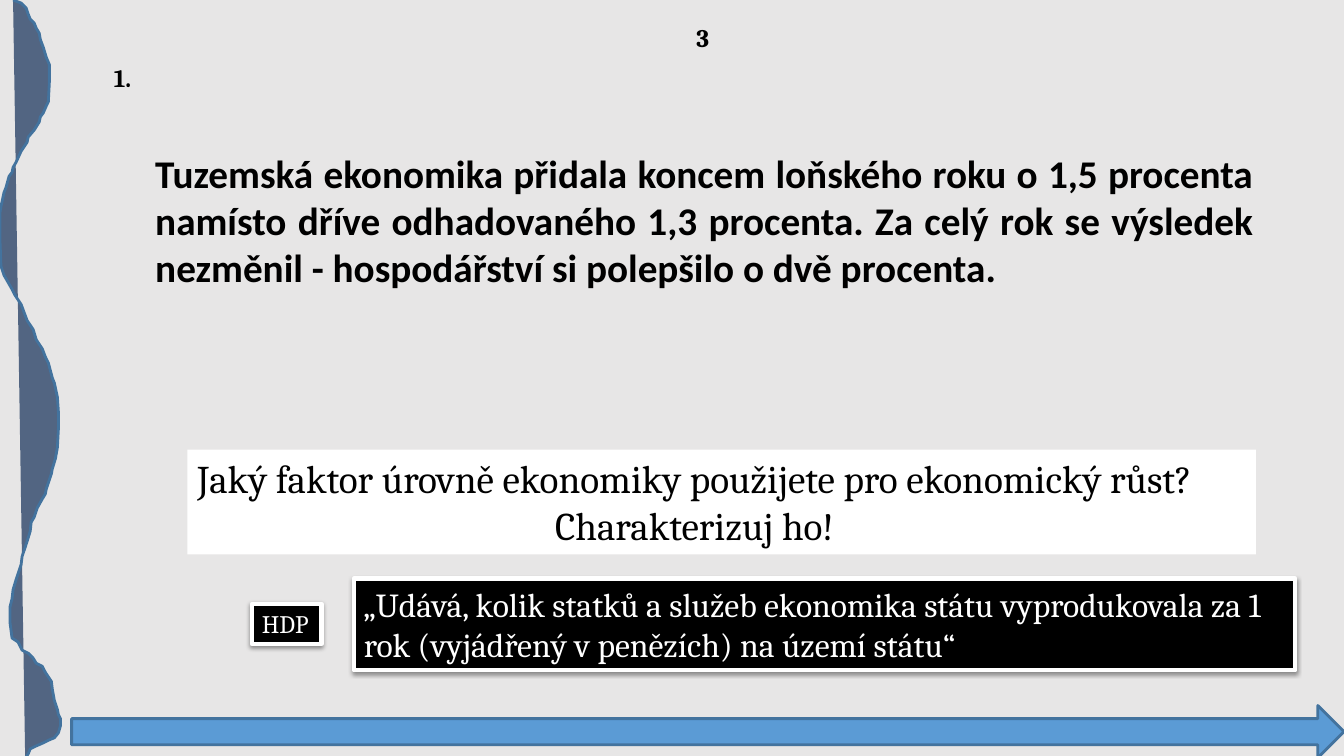
from dataclasses import dataclass

from lxml.etree import SubElement
from pptx import Presentation
from pptx.dml.color import RGBColor
from pptx.enum.shapes import MSO_SHAPE
from pptx.enum.text import MSO_ANCHOR, MSO_AUTO_SIZE, PP_ALIGN
from pptx.oxml.ns import qn
from pptx.shapes.autoshape import Shape
from pptx.slide import Slide
from pptx.util import Emu, Inches, Pt

SLIDE_WIDTH = Inches(13.33)
SLIDE_HEIGHT = Inches(7.5)
COLUMN = SLIDE_WIDTH / 100
ROW = SLIDE_HEIGHT / 100
RIBBON_UNITS_PER_HEIGHT = 750

BLACK, WHITE = "000000", "FFFFFF"
BACKGROUND = "E7E6E6"
RIBBON_FILL, ARROW_FILL, DECOR_LINE = "526582", "5B9BD5", "43739E"

RIBBON_POINTS = [
    (13, 0), (21, 3), (26, 8), (28, 14), (30, 19), (34, 23), (36, 28),
    (39, 33), (40, 39), (43, 47), (46, 57), (49, 64), (49, 82), (48, 101),
    (46, 105), (43, 112), (40, 116), (39, 121), (34, 129), (28, 136),
    (27, 141), (21, 150), (16, 161), (13, 166), (12, 171), (9, 175),
    (6, 186), (4, 191), (1, 205), (0, 211), (0, 238), (1, 264), (4, 273),
    (8, 280), (12, 287), (15, 293), (21, 302), (27, 318), (33, 327),
    (36, 337), (42, 346), (45, 354), (48, 360), (52, 375), (54, 380),
    (57, 394), (58, 409), (58, 425), (57, 444), (55, 455), (52, 465),
    (51, 470), (46, 485), (45, 490), (42, 495), (37, 504), (34, 513),
    (31, 518), (30, 527), (27, 537), (25, 543), (22, 552), (21, 560),
    (18, 569), (16, 575), (13, 585), (12, 594), (10, 602), (10, 618),
    (12, 633), (18, 637), (22, 645), (28, 648), (33, 653), (36, 658),
    (42, 661), (45, 667), (51, 676), (52, 684), (54, 695), (57, 704),
    (58, 709), (60, 713), (60, 720), (58, 727), (54, 732), (49, 734),
    (43, 737), (36, 740), (30, 743), (28, 748), (25, 752),
]


@dataclass(frozen=True)
class Area:
    """Left, top, width and height in grid columns and rows."""

    left: float
    top: float
    width: float
    height: float

    def lengths(self) -> tuple[Emu, Emu, Emu, Emu]:
        """Return the four lengths of the area."""
        return (Emu(round(self.left * COLUMN)), Emu(round(self.top * ROW)),
                Emu(round(self.width * COLUMN)), Emu(round(self.height * ROW)))


@dataclass(frozen=True)
class Label:
    """A box of text with its look."""

    text: str
    area: Area
    size: int
    color: str = BLACK
    bold: bool = False
    fill: str | None = None
    framed: bool = False
    wrap: bool = False
    alignments: tuple[PP_ALIGN, ...] = (PP_ALIGN.LEFT,)
    font: str = "Cambria"


HEADLINE = Label(
    "Tuzemská ekonomika přidala koncem loňského roku o 1,5 procenta namísto "
    "dříve odhadovaného 1,3 procenta. Za celý rok se výsledek nezměnil - "
    "hospodářství si polepšilo o dvě procenta.",
    Area(10.8, 19.07, 83.18, 20.13), 28, bold=True, wrap=True,
    alignments=(PP_ALIGN.JUSTIFY,), font="Calibri")

LABELS = [
    Label("1.", Area(7.73, 7.6, 3.08, 5.33), 18, bold=True),
    Label("3", Area(51.08, 2.27, 2.63, 5.33), 18, bold=True),
    Label("Jaký faktor úrovně ekonomiky použijete pro ekonomický růst?\n"
          "Charakterizuj ho!",
          Area(13.95, 59.47, 79.5, 13.87), 28, fill=WHITE,
          alignments=(PP_ALIGN.LEFT, PP_ALIGN.CENTER)),
    Label("HDP", Area(18.75, 79.87, 5.18, 5.33), 18, WHITE,
          fill=BLACK, framed=True),
    Label("„Udává, kolik statků a služeb ekonomika státu vyprodukovala za 1 "
          "rok (vyjádřený v penězích) na území státu“",
          Area(26.33, 76.53, 70.05, 12.13), 24, WHITE,
          fill=BLACK, framed=True, wrap=True),
]


def color(value: str) -> RGBColor:
    """Turn a hex string into a colour."""
    return RGBColor.from_string(value)


def paint(shape: Shape, fill: str, line: str | None, width: float = 0) -> None:
    """Set fill and outline and remove the shadow."""
    shape.shadow.inherit = False
    shape.fill.solid()
    shape.fill.fore_color.rgb = color(fill)
    if line is None:
        shape.line.fill.background()
    else:
        shape.line.color.rgb = color(line)
        shape.line.width = Pt(width)


def add_soft_shadow(shape: Shape) -> None:
    """Give the shape a soft shadow falling straight down."""
    effects = shape.element.spPr.find(qn("a:effectLst"))
    shadow = SubElement(effects, qn("a:outerShdw"), blurRad=str(Pt(3.1)),
                        dist=str(Pt(1.6)), dir="5400000", rotWithShape="0")
    tint = SubElement(shadow, qn("a:srgbClr"), val=BLACK)
    SubElement(tint, qn("a:alpha"), val="38000")


def write_label(shape: Shape, label: Label) -> None:
    """Write and format the text of a label."""
    frame = shape.text_frame
    frame.text = label.text
    frame.word_wrap = label.wrap
    frame.auto_size = MSO_AUTO_SIZE.SHAPE_TO_FIT_TEXT
    frame.vertical_anchor = MSO_ANCHOR.TOP
    for paragraph, alignment in zip(frame.paragraphs, label.alignments):
        paragraph.alignment = alignment
        for run in paragraph.runs:
            run.font.name = label.font
            run.font.size = Pt(label.size)
            run.font.bold = label.bold
            run.font.color.rgb = color(label.color)


def add_label(slide: Slide, label: Label) -> None:
    """Draw a label as a plain text box or a filled rectangle."""
    lengths = label.area.lengths()
    if label.fill is None:
        shape = slide.shapes.add_textbox(*lengths)
    else:
        shape = slide.shapes.add_shape(MSO_SHAPE.RECTANGLE, *lengths)
        paint(shape, label.fill, WHITE if label.framed else None, 3)
    if label.framed:
        add_soft_shadow(shape)
    write_label(shape, label)


def add_headline(slide: Slide) -> None:
    """Place the news text in the title placeholder."""
    title = slide.shapes.title
    title.left, title.top, title.width, title.height = HEADLINE.area.lengths()
    write_label(title, HEADLINE)


def add_decoration(slide: Slide) -> None:
    """Draw the wavy ribbon on the left and the arrow at the bottom."""
    builder = slide.shapes.build_freeform(
        *RIBBON_POINTS[0], scale=SLIDE_HEIGHT / RIBBON_UNITS_PER_HEIGHT)
    builder.add_line_segments(RIBBON_POINTS[1:], close=False)
    paint(builder.convert_to_shape(), RIBBON_FILL, DECOR_LINE, 2)
    arrow = slide.shapes.add_shape(
        MSO_SHAPE.RIGHT_ARROW, *Area(5.33, 93.33, 94.67, 6.93).lengths())
    paint(arrow, ARROW_FILL, DECOR_LINE, 2)


def main() -> None:
    """Build the slide and save it."""
    presentation = Presentation()
    presentation.slide_width = SLIDE_WIDTH
    presentation.slide_height = SLIDE_HEIGHT
    slide = presentation.slides.add_slide(presentation.slide_layouts[5])
    slide.background.fill.solid()
    slide.background.fill.fore_color.rgb = color(BACKGROUND)
    add_decoration(slide)
    add_headline(slide)
    for label in LABELS:
        add_label(slide, label)
    presentation.save("out.pptx")


if __name__ == "__main__":
    main()
